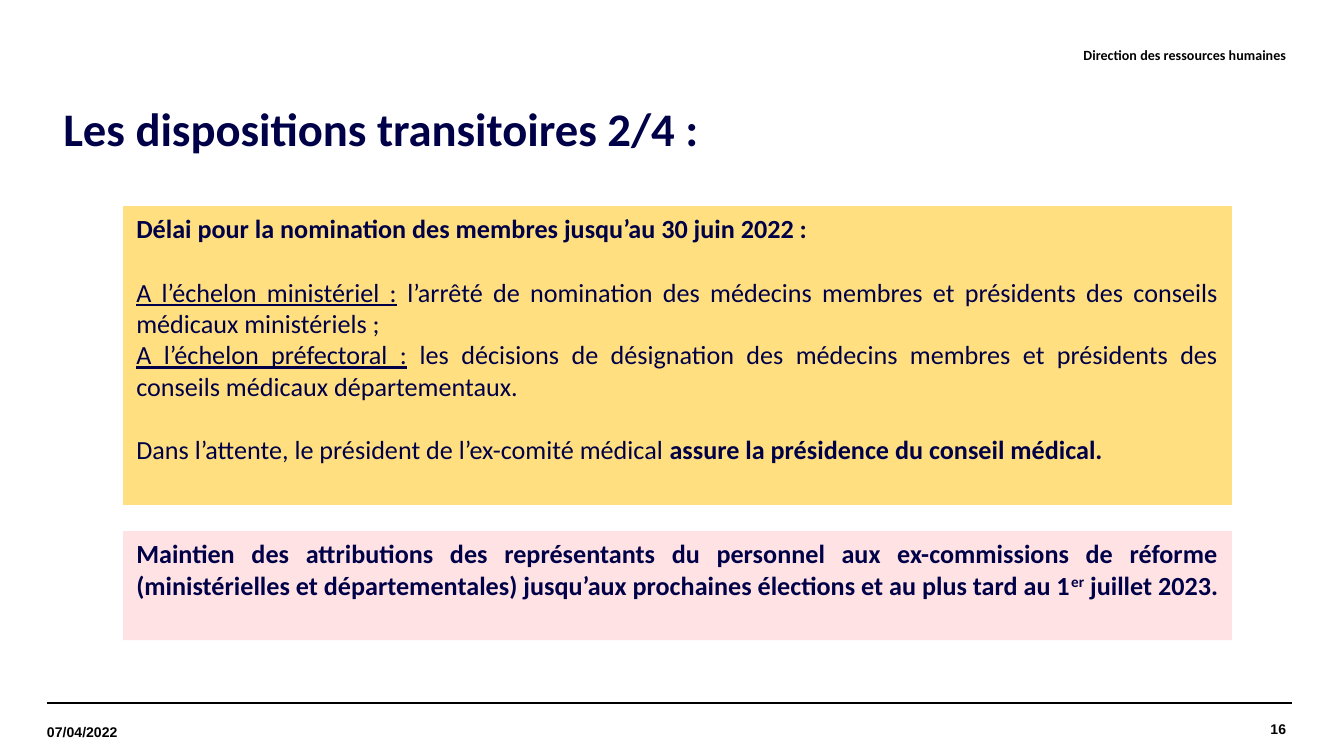
"""Build the slide on transitional provisions for the medical boards."""
import lxml.etree
import pptx
import pptx.dml.color
import pptx.enum.shapes
import pptx.enum.text
import pptx.oxml.ns
import pptx.util

Pt = pptx.util.Pt
Align = pptx.enum.text.PP_ALIGN
Anchor = pptx.enum.text.MSO_ANCHOR
qn = pptx.oxml.ns.qn
NAVY, BLACK = "000048", "000000"


def set_color(color_format, value):
    color_format.rgb = pptx.dml.color.RGBColor.from_string(value)


def format_paragraph(paragraph, align, size, color, name="Calibri"):
    paragraph.alignment = align
    paragraph.font.name = name
    paragraph.font.size = Pt(size)
    set_color(paragraph.font.color, color)


presentation = pptx.Presentation()
presentation.slide_width, presentation.slide_height = Pt(720), Pt(405)
slide = presentation.slides.add_slide(presentation.slide_layouts[5])

for left in (25.2, 28):
    rule = slide.shapes.add_connector(
        pptx.enum.shapes.MSO_CONNECTOR.STRAIGHT, Pt(left), Pt(376.6), Pt(left + 664), Pt(376.6))
    set_color(rule.line.color, BLACK)
    rule.line.width = Pt(0.8)
    lxml.etree.SubElement(rule._element.spPr, qn("a:effectLst"))

labels = [
    ("16", 582.5, 376.6, 106.5, Align.RIGHT, "Arial"),
    ("07/04/2022", 25.2, 378, 92, Align.LEFT, "Arial"),
    ("Direction des ressources humaines", 553, 15.4, 136, Align.RIGHT, "Calibri"),
]
for text, left, top, width, align, name in labels:
    frame = slide.shapes.add_textbox(Pt(left), Pt(top), Pt(width), Pt(28)).text_frame
    frame.margin_left = frame.margin_right = frame.margin_top = frame.margin_bottom = 0
    frame.word_wrap = True
    frame.vertical_anchor = Anchor.MIDDLE
    frame.text = text
    format_paragraph(frame.paragraphs[0], align, 7.5, BLACK, name)
    frame.paragraphs[0].font.bold = True

title = slide.shapes.title
title.left, title.top, title.width, title.height = Pt(25.2), Pt(44), Pt(663), Pt(52.5)
title.text_frame.text = "Les dispositions transitoires 2/4 :"
title.text_frame.vertical_anchor = Anchor.MIDDLE
heading = title.text_frame.paragraphs[0]
heading._p.get_or_add_pPr().set("marL", str(Pt(1.5)))
heading.line_spacing = 0.9
format_paragraph(heading, Align.LEFT, 25, NAVY)
heading.font.bold = True

boxes = [
    ("FFC6CA", 284.5, 58.5, [
        (0, [("Maintien des attributions des représentants du personnel aux ex-commissions de réforme "
              "(ministérielles et départementales) jusqu’aux prochaines élections et au plus tard au 1", "b"),
             ("er", "bs"), (" juillet 2023.", "b")]),
    ]),
    ("FFC000", 110.5, 160, [
        (0, [("Délai pour la nomination des membres jusqu’au 30 juin 2022 :", "b")]),
        (17, [("A l’échelon ministériel :", "u"),
              (" l’arrêté de nomination des médecins membres et présidents des conseils "
               "médicaux ministériels ;", "")]),
        (0, [("A l’échelon préfectoral :", "u"),
             (" les décisions de désignation des médecins membres et présidents des "
              "conseils médicaux départementaux.", "")]),
        (17, [("Dans l’attente, le président de l’ex-comité médical ", ""),
              ("assure la présidence du conseil médical.", "b")]),
    ]),
]
for fill, top, height, paragraphs in boxes:
    box = slide.shapes.add_shape(
        pptx.enum.shapes.MSO_SHAPE.RECTANGLE, Pt(65.9), Pt(top), Pt(594), Pt(height))
    box.shadow.inherit = False
    box.fill.solid()
    set_color(box.fill.fore_color, fill)
    color_element = box._element.spPr.find(qn("a:solidFill"))[0]
    lxml.etree.SubElement(color_element, qn("a:alpha")).set("val", "50000")
    box.line.fill.background()
    frame = box.text_frame
    frame.word_wrap = True
    frame.vertical_anchor = Anchor.TOP
    for index, (space_before, runs) in enumerate(paragraphs):
        paragraph = frame.add_paragraph() if index else frame.paragraphs[0]
        paragraph.space_before = Pt(space_before)
        format_paragraph(paragraph, Align.JUSTIFY, 14, NAVY)
        for text, style in runs:
            run = paragraph.add_run()
            run.text = text
            run.font.bold = "b" in style
            run.font.underline = "u" in style
            if "s" in style:
                run._r.get_or_add_rPr().set("baseline", "30000")

presentation.save("out.pptx")
